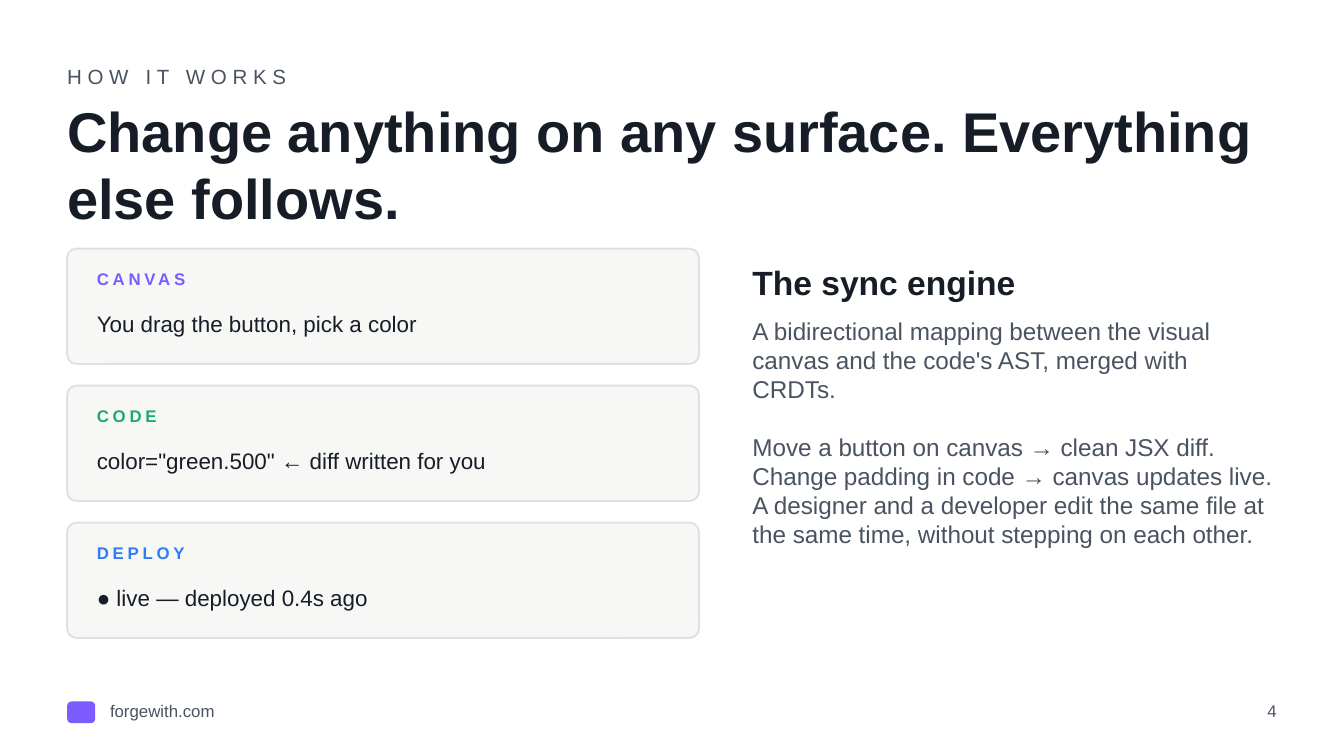
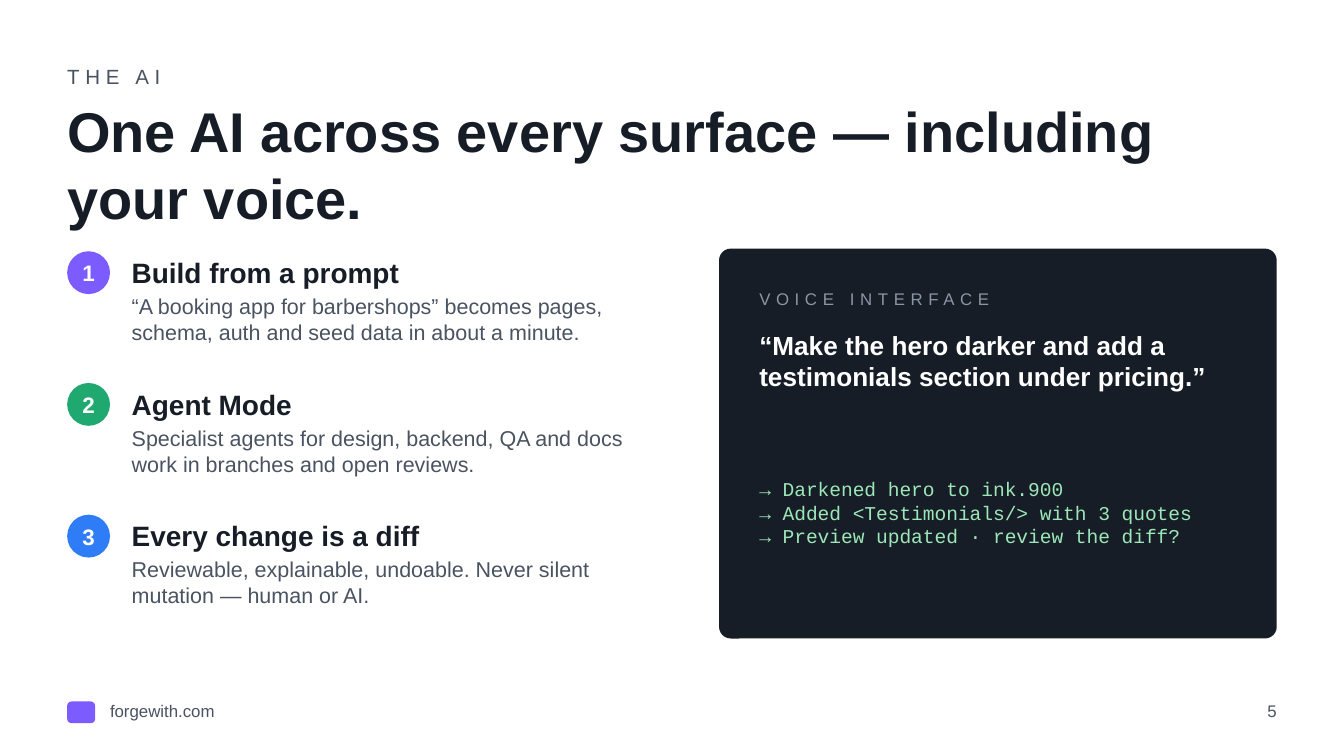
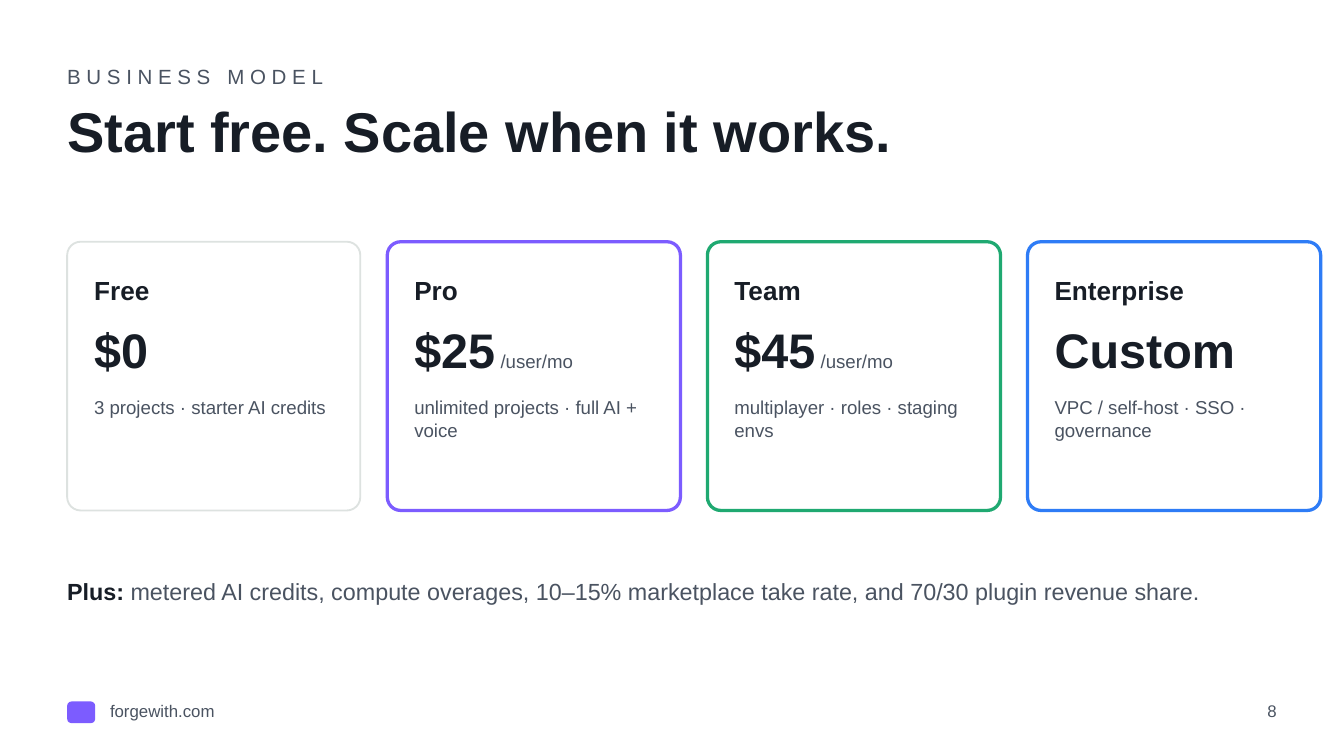
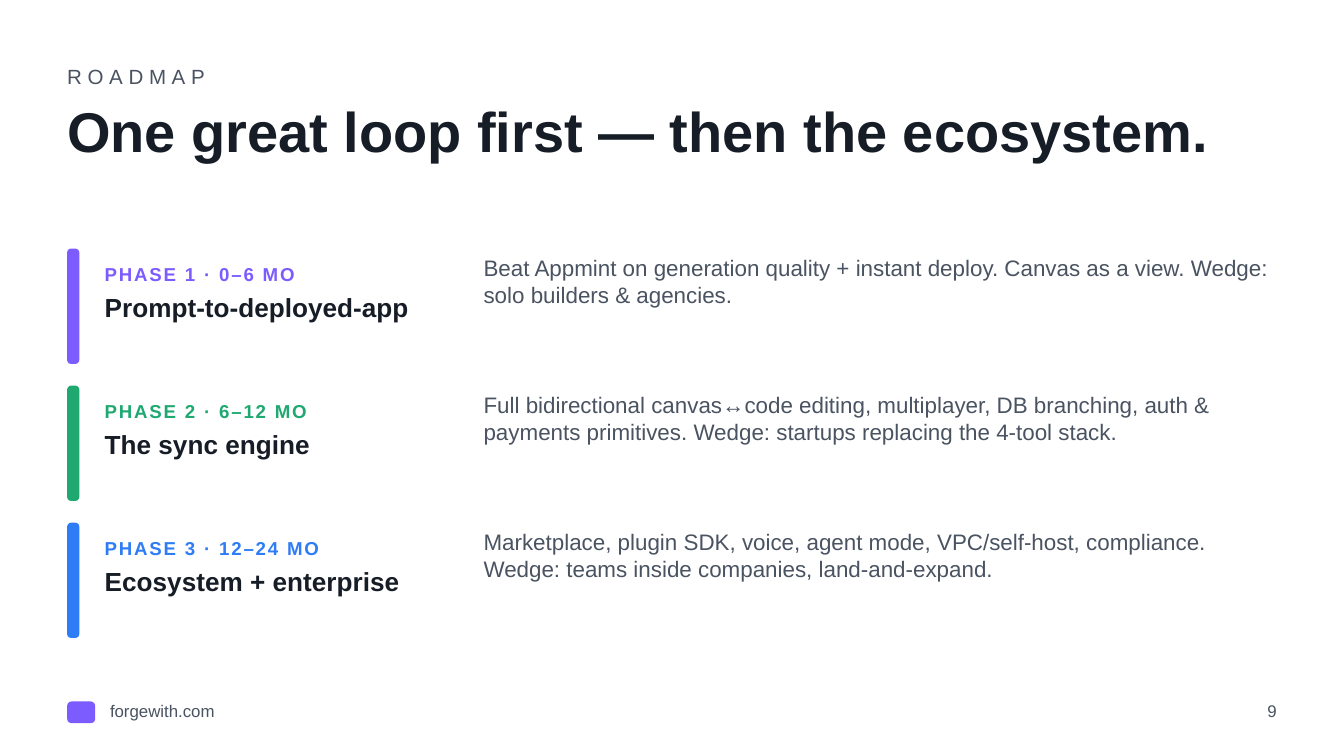
from pptx import Presentation
from pptx.dml.color import RGBColor
from pptx.enum.shapes import MSO_SHAPE as Preset
from pptx.enum.text import MSO_ANCHOR as Anchor, MSO_AUTO_SIZE as AutoSize, PP_ALIGN as Align
from pptx.oxml.ns import qn
from pptx.util import Cm, Pt

WHITE = RGBColor(0xFF, 0xFF, 0xFF)
INK = RGBColor(0x17, 0x1D, 0x26)
SLATE = RGBColor(0x4A, 0x53, 0x61)
MIST = RGBColor(0x8B, 0x96, 0xA5)
PAPER = RGBColor(0xF7, 0xF8, 0xF6)
BORDER = RGBColor(0xDD, 0xE2, 0xE0)
VIOLET = RGBColor(0x7C, 0x5C, 0xFF)
GREEN = RGBColor(0x1F, 0xA9, 0x71)
BLUE = RGBColor(0x2E, 0x7C, 0xF6)
MINT = RGBColor(0x9C, 0xE7, 0xB8)
ACCENTS = (VIOLET, GREEN, BLUE)

LEFT = 1.27
CONTENT_WIDTH = 22.86
CONTENT_TOP = 4.7
ROW_HEIGHT = 2.18
ROW_STEP = 2.59
TITLE_ONLY, TITLE_AND_BODY = 5, 1


def place(shape, left, top, width, height):
    """Move and size a shape, in centimetres."""
    shape.left, shape.top = Cm(left), Cm(top)
    shape.width, shape.height = Cm(width), Cm(height)


def add_run(paragraph, text, size=12, color=INK, bold=False, font="Arial", spacing=0):
    """Append one formatted run; spacing is the letter spacing in points."""
    run = paragraph.add_run()
    run.text = text
    run.font.size = Pt(size)
    run.font.name = font
    run.font.bold = bold
    run.font.color.rgb = color
    if spacing:
        run._r.get_or_add_rPr().set("spc", str(spacing * 100))


def write(shape, text, align=Align.LEFT, anchor=Anchor.TOP, gap=0, tail="", tail_format=None, **run_format):
    """Fill a shape with one paragraph per line, and an optional differently formatted tail."""
    frame = shape.text_frame
    frame.word_wrap = True
    frame.auto_size = AutoSize.NONE
    frame.vertical_anchor = anchor
    frame.margin_left = frame.margin_right = frame.margin_top = frame.margin_bottom = 0
    for index, line in enumerate(text.split("\n")):
        paragraph = frame.add_paragraph() if index else frame.paragraphs[0]
        paragraph.alignment = align
        paragraph.space_before = Pt(gap if index else 0)
        add_run(paragraph, line, **run_format)
    if tail:
        add_run(paragraph, tail, **{**run_format, **tail_format})


def add_text(slide, text, left, top, width, height, **text_format):
    """Add a text box."""
    box = slide.shapes.add_textbox(Cm(left), Cm(top), Cm(width), Cm(height))
    write(box, text, **text_format)


def add_label(slide, text, left, top, width, height, **text_format):
    """Add a vertically centred text box."""
    add_text(slide, text, left, top, width, height, anchor=Anchor.MIDDLE, **text_format)


def add_panel(slide, left, top, width, height, fill, border=None, border_width=1, radius=None, preset=Preset.ROUNDED_RECTANGLE):
    """Add a flat filled shape, with a border if a colour is given."""
    panel = slide.shapes.add_shape(preset, Cm(left), Cm(top), Cm(width), Cm(height))
    panel.shadow.inherit = False
    panel.fill.solid()
    panel.fill.fore_color.rgb = fill
    if border is None:
        panel.line.fill.background()
    else:
        panel.line.color.rgb = border
        panel.line.width = Pt(border_width)
    if radius is not None:
        panel.adjustments[0] = radius
    return panel


def add_body(slide, text, left, top, width, height, **text_format):
    """Fill the body placeholder with unbulleted paragraphs."""
    body = slide.placeholders[1]
    place(body, left, top, width, height)
    body.element.getparent().append(body.element)
    write(body, text, **text_format)
    for paragraph in body.text_frame.paragraphs:
        properties = paragraph._p.get_or_add_pPr()
        properties.set("marL", "0")
        properties.set("indent", "0")
        properties.append(properties.makeelement(qn("a:buNone"), {}))


def add_page(deck, layout, number, eyebrow, title):
    """Add a slide with its eyebrow, title and footer."""
    slide = deck.slides.add_slide(deck.slide_layouts[layout])
    place(slide.shapes.title, LEFT, 1.83, CONTENT_WIDTH, 1.9)
    write(slide.shapes.title, title, size=30, bold=True)
    add_label(slide, eyebrow, LEFT, 1.07, CONTENT_WIDTH, 0.76, size=11, color=SLATE, spacing=3)
    add_panel(slide, LEFT, 13.26, 0.53, 0.41, VIOLET, radius=0.2)
    add_label(slide, "forgewith.com", 2.08, 13.06, 5.08, 0.76, size=9, color=SLATE)
    add_label(slide, str(number), 23.37, 13.06, 0.76, 0.76, size=9, color=SLATE, align=Align.RIGHT)
    return slide


def add_surface(slide, top, accent, name, example):
    """Add a card for one editing surface."""
    add_panel(slide, LEFT, top, 11.94, ROW_HEIGHT, PAPER, border=BORDER, radius=0.08)
    add_label(slide, name, 1.83, top + 0.25, 5.08, 0.64, size=9, color=accent, bold=True, spacing=2)
    add_label(slide, example, 1.83, top + 0.97, 10.92, 0.89)


def add_capability(slide, top, accent, number, heading, detail):
    """Add a numbered capability with its explanation."""
    disc = add_panel(slide, LEFT, top + 0.05, 0.81, 0.81, accent, preset=Preset.OVAL)
    write(disc, str(number), align=Align.CENTER, anchor=Anchor.MIDDLE, color=WHITE, bold=True)
    add_label(slide, heading, 2.49, top, 9.91, 0.89, size=15, bold=True)
    add_text(slide, detail, 2.49, top + 0.84, 9.91, 1.57, size=11.5, color=SLATE)


def add_plan(slide, left, border, border_width, name, price, unit, features):
    """Add a pricing card."""
    top, inner = 4.57, left + 0.51
    add_panel(slide, left, top, 5.54, 5.08, WHITE, border=border, border_width=border_width, radius=0.05)
    add_label(slide, name, inner, top + 0.51, 4.57, 0.81, size=14, bold=True)
    add_label(slide, price, inner, top + 1.4, 4.7, 1.27, size=26, bold=True,
              tail=unit, tail_format={"size": 10, "color": SLATE, "bold": False})
    add_text(slide, features, inner, top + 2.92, 4.57, 1.78, size=10, color=SLATE)


def add_phase(slide, top, accent, period, name, scope):
    """Add a roadmap row."""
    add_panel(slide, LEFT, top, 0.23, ROW_HEIGHT, accent, radius=0.33)
    add_label(slide, period, 1.98, top + 0.1, 5.84, 0.76, size=10, color=accent, bold=True, spacing=1)
    add_text(slide, name, 1.98, top + 0.81, 6.6, 1.27, size=14, bold=True)
    add_text(slide, scope, 9.14, top + 0.1, 14.99, 2.16, color=SLATE)


def build_how_it_works(deck):
    """Build the slide on surfaces and the sync engine."""
    slide = add_page(deck, TITLE_AND_BODY, 4, "HOW IT WORKS",
                     "Change anything on any surface. Everything else follows.")
    surfaces = (
        ("CANVAS", "You drag the button, pick a color"),
        ("CODE", 'color="green.500" ← diff written for you'),
        ("DEPLOY", "● live — deployed 0.4s ago"),
    )
    for row, (accent, surface) in enumerate(zip(ACCENTS, surfaces)):
        add_surface(slide, CONTENT_TOP + row * ROW_STEP, accent, *surface)
    add_label(slide, "The sync engine", 14.22, 4.83, 9.91, 1.02, size=18, bold=True)
    add_body(slide,
             "A bidirectional mapping between the visual canvas and the code's AST, merged with CRDTs.\n"
             "Move a button on canvas → clean JSX diff. Change padding in code → canvas updates live. "
             "A designer and a developer edit the same file at the same time, without stepping on each other.",
             14.22, 5.97, 9.91, 5.84, size=13, color=SLATE, gap=15.5)


def build_ai(deck):
    """Build the slide on the AI and its voice interface."""
    slide = add_page(deck, TITLE_AND_BODY, 5, "THE AI",
                     "One AI across every surface — including your voice.")
    capabilities = (
        ("Build from a prompt",
         "“A booking app for barbershops” becomes pages, schema, auth and seed data in about a minute."),
        ("Agent Mode",
         "Specialist agents for design, backend, QA and docs work in branches and open reviews."),
        ("Every change is a diff",
         "Reviewable, explainable, undoable. Never silent mutation — human or AI."),
    )
    for row, (accent, capability) in enumerate(zip(ACCENTS, capabilities)):
        add_capability(slide, CONTENT_TOP + row * 2.49, accent, row + 1, *capability)
    add_panel(slide, 13.59, CONTENT_TOP, 10.54, 7.37, INK, radius=0.03)
    add_label(slide, "VOICE INTERFACE", 14.35, 5.33, 9.14, 0.64, size=9, color=MIST, spacing=3)
    add_text(slide, "“Make the hero darker and add a testimonials section under pricing.”",
             14.35, 6.22, 9.02, 2.41, size=14, color=WHITE, bold=True)
    add_body(slide,
             "→ Darkened hero to ink.900\n"
             "→ Added <Testimonials/> with 3 quotes\n"
             "→ Preview updated · review the diff?",
             14.35, 9.02, 9.02, 2.54, size=10.5, color=MINT, font="Courier New")


def build_business_model(deck):
    """Build the pricing slide."""
    slide = add_page(deck, TITLE_ONLY, 8, "BUSINESS MODEL", "Start free. Scale when it works.")
    plans = (
        (BORDER, 1, "Free", "$0", "", "3 projects · starter AI credits"),
        (VIOLET, 1.75, "Pro", "$25", " /user/mo", "unlimited projects · full AI + voice"),
        (GREEN, 1.75, "Team", "$45", " /user/mo", "multiplayer · roles · staging envs"),
        (BLUE, 1.75, "Enterprise", "Custom", "", "VPC / self-host · SSO · governance"),
    )
    for column, plan in enumerate(plans):
        add_plan(slide, LEFT + column * 6.05, *plan)
    add_label(slide, "Plus: ", LEFT, 10.54, CONTENT_WIDTH, 1.27, size=12.5, bold=True,
              tail="metered AI credits, compute overages, 10–15% marketplace take rate, "
                   "and 70/30 plugin revenue share.",
              tail_format={"color": SLATE, "bold": False})


def build_roadmap(deck):
    """Build the roadmap slide."""
    slide = add_page(deck, TITLE_ONLY, 9, "ROADMAP", "One great loop first — then the ecosystem.")
    phases = (
        ("PHASE 1 · 0–6 MO", "Prompt-to-deployed-app",
         "Beat Appmint on generation quality + instant deploy. Canvas as a view. "
         "Wedge: solo builders & agencies."),
        ("PHASE 2 · 6–12 MO", "The sync engine",
         "Full bidirectional canvas↔code editing, multiplayer, DB branching, auth & payments primitives. "
         "Wedge: startups replacing the 4-tool stack."),
        ("PHASE 3 · 12–24 MO", "Ecosystem + enterprise",
         "Marketplace, plugin SDK, voice, agent mode, VPC/self-host, compliance. "
         "Wedge: teams inside companies, land-and-expand."),
    )
    for row, (accent, phase) in enumerate(zip(ACCENTS, phases)):
        add_phase(slide, CONTENT_TOP + row * ROW_STEP, accent, *phase)


def main():
    """Build the deck and save it."""
    deck = Presentation()
    deck.slide_width, deck.slide_height = Cm(25.4), Cm(14.29)
    build_how_it_works(deck)
    build_ai(deck)
    build_business_model(deck)
    build_roadmap(deck)
    deck.save("out.pptx")


if __name__ == "__main__":
    main()
